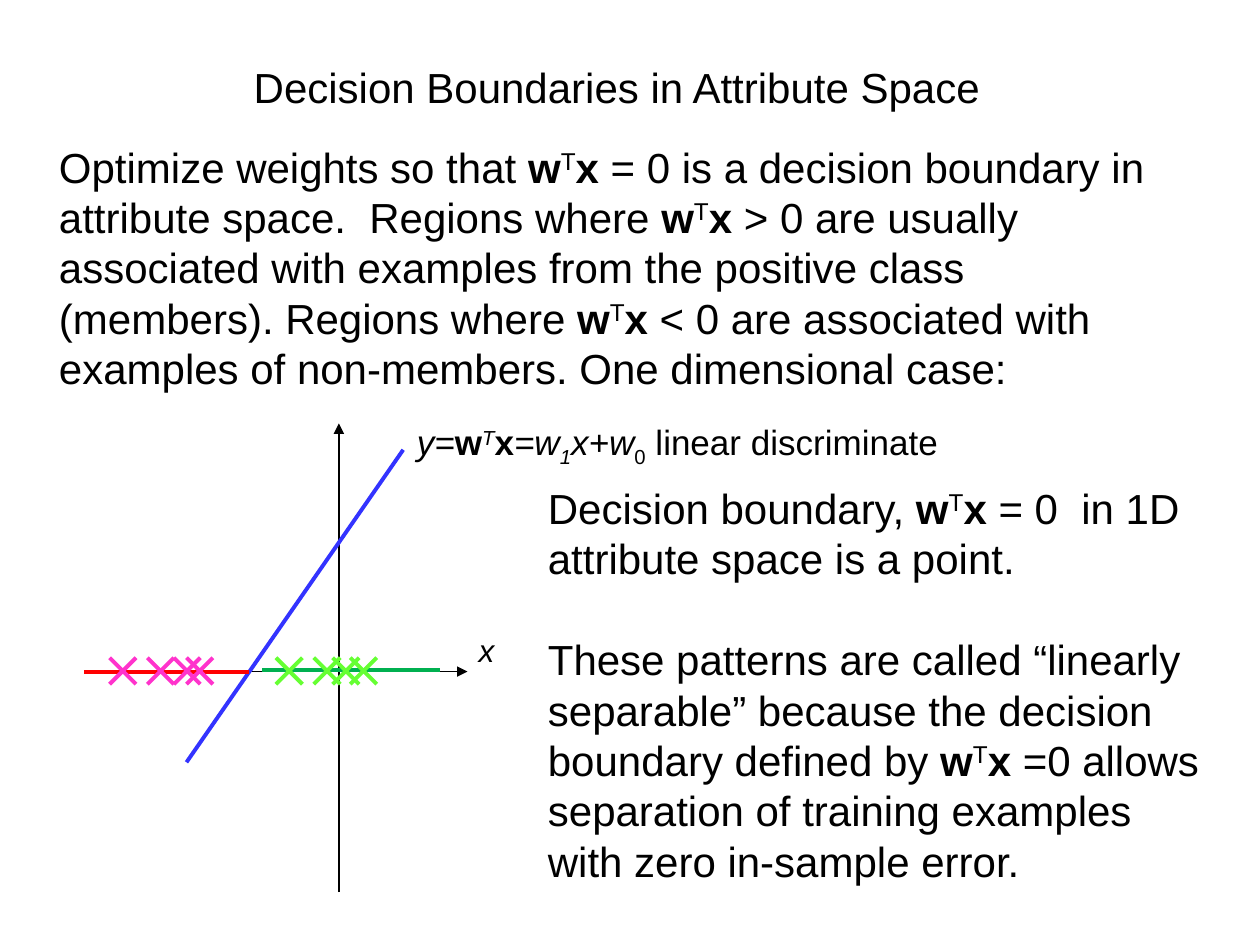
from lxml.etree import SubElement
from pptx import Presentation
from pptx.dml.color import RGBColor
from pptx.enum.shapes import MSO_CONNECTOR as Connector
from pptx.enum.text import MSO_ANCHOR as Anchor, PP_ALIGN as Align
from pptx.oxml.ns import qn
from pptx.util import Inches, Pt

STYLES = {
    "plain": {},
    "bold": {"bold": True},
    "italic": {"italic": True},
}
RAISED, LOWERED = 30000, -25000
WTX = [("w", "bold"), ("T", "plain", RAISED), ("x", "bold")]
GREEN_EXAMPLES = [2.19, 2.49, 2.64, 2.78]
PINK_EXAMPLES = [0.87, 1.17, 1.38, 1.48]
MARK_TOP, MARK_SIZE = 5.22, 0.21
AXIS_Y, AXIS_X = 5.33, 2.69


def color(value):
    return RGBColor.from_string(value)


class SlideBuilder:
    """Holds the text and line style and draws elements on one slide."""

    font_name = "Arial"
    ink = "000000"

    def __init__(self, presentation):
        self.slide = presentation.slides.add_slide(presentation.slide_layouts[5])

    def add_runs(self, paragraph, runs, size):
        for text, style, *baseline in runs:
            run = paragraph.add_run()
            run.text = text
            values = {"name": self.font_name, "size": Pt(size), "bold": False, "italic": False}
            for name, value in {**values, **STYLES[style]}.items():
                setattr(run.font, name, value)
            run.font.color.rgb = color(self.ink)
            if baseline:
                run.font._element.set("baseline", str(baseline[0]))

    def place(self, shape, box):
        for name, value in zip(("left", "top", "width", "height"), box):
            setattr(shape, name, Inches(value))

    def title(self, text, box, size):
        shape = self.slide.shapes.title
        self.place(shape, box)
        frame = shape.text_frame
        for name, value in {"word_wrap": False, "vertical_anchor": Anchor.TOP}.items():
            setattr(frame, name, value)
        frame.paragraphs[0].alignment = Align.CENTER
        self.add_runs(frame.paragraphs[0], [(text, "plain")], size)

    def text(self, paragraphs, box, size, wrap=True, gaps=None):
        frame = self.slide.shapes.add_textbox(*map(Inches, box)).text_frame
        frame.word_wrap = wrap
        for index, runs in enumerate(paragraphs):
            paragraph = frame.add_paragraph() if index else frame.paragraphs[0]
            paragraph.space_before = Pt((gaps or {}).get(index, 0))
            self.add_runs(paragraph, runs, size)

    def line(self, start, end, line_color, width=2.25, arrow=False):
        points = map(Inches, (*start, *end))
        connector = self.slide.shapes.add_connector(Connector.STRAIGHT, *points)
        connector.line.color.rgb = color(line_color)
        connector.line.width = Pt(width)
        properties = connector._element.spPr
        if arrow:
            SubElement(properties.find(qn("a:ln")), qn("a:tailEnd"), type="triangle")
        SubElement(properties, qn("a:effectLst"))

    def cross(self, left, line_color):
        right, bottom = left + MARK_SIZE, MARK_TOP + MARK_SIZE
        self.line((left, MARK_TOP), (right, bottom), line_color)
        self.line((right, MARK_TOP), (left, bottom), line_color)


def main():
    presentation = Presentation()
    presentation.slide_width, presentation.slide_height = Inches(10), Inches(7.5)
    builder = SlideBuilder(presentation)

    builder.title("Decision Boundaries in Attribute Space", (1.88, 0.44, 6.03, 0.5), 24)
    builder.text([[
        ("Optimize weights so that ", "plain"), *WTX,
        (" = 0 is a decision boundary in attribute space.  Regions where ", "plain"), *WTX,
        (" > 0 are usually associated with examples from the positive class (members). "
         "Regions where ", "plain"), *WTX,
        (" < 0 are associated with examples of non-members. One dimensional case:", "plain"),
    ]], (0.37, 1.07, 9.04, 2.12), 24)

    builder.line((1.68, AXIS_Y), (3.71, AXIS_Y), "000000", 0.75, arrow=True)
    builder.line((AXIS_X, 7.08), (AXIS_X, 3.36), "000000", 0.75, arrow=True)
    builder.line((1.48, 6.05), (3.2, 3.57), "3333FF")
    builder.line((2.08, 5.32), (3.49, 5.32), "00B050")
    builder.line((0.67, AXIS_Y), (1.98, AXIS_Y), "FF0000")
    for examples, mark_color in ((GREEN_EXAMPLES, "66FF33"), (PINK_EXAMPLES, "FF33CC")):
        for left in examples:
            builder.cross(left, mark_color)

    builder.text([[("x", "italic")]], (3.7, 4.96, 0.38, 0.56), 18, wrap=False)
    builder.text([
        [("Decision boundary, ", "plain"), *WTX,
         (" = 0  in 1D attribute space is a point.", "plain")],
        [("These patterns are called “linearly", "plain")],
        [("separable” because the decision", "plain")],
        [("boundary defined by ", "plain"), *WTX,
         (" =0 allows separation of training examples with zero in-sample error.", "plain")],
    ], (4.25, 3.78, 5.42, 3.33), 24, gaps={1: 28.8})
    builder.text([[
        ("y=", "italic"), ("w", "bold"), ("T", "italic", RAISED), ("x", "bold"),
        ("=w", "italic"), ("1", "italic", LOWERED), ("x+w", "italic"),
        ("0", "plain", LOWERED), (" linear discriminate", "plain"),
    ]], (3.21, 3.29, 4.46, 0.44), 20, wrap=False)

    presentation.save("out.pptx")


if __name__ == "__main__":
    main()
